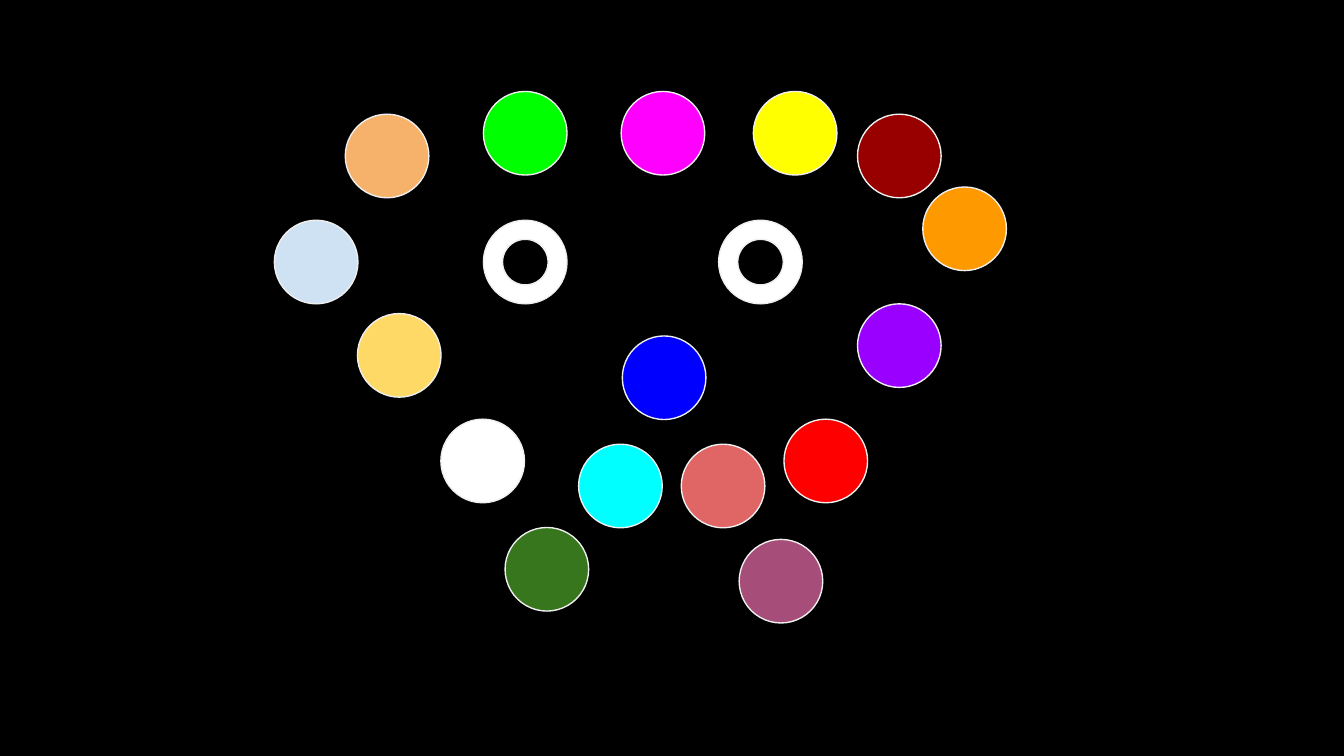
"""Build a black slide with a face made of coloured discs."""
from pptx import Presentation
from pptx.dml.color import RGBColor
from pptx.enum.shapes import MSO_SHAPE
from pptx.util import Pt

BLACK = RGBColor(0x00, 0x00, 0x00)
WHITE = RGBColor(0xFF, 0xFF, 0xFF)
OUTLINE = RGBColor(0xEF, 0xEF, 0xEF)
BLUE = RGBColor(0x00, 0x00, 0xFF)
RED = RGBColor(0xFF, 0x00, 0x00)
SAND = RGBColor(0xFF, 0xD9, 0x66)
PURPLE = RGBColor(0x99, 0x00, 0xFF)
FOREST = RGBColor(0x38, 0x76, 0x1D)
PLUM = RGBColor(0xA6, 0x4D, 0x79)
CYAN = RGBColor(0x00, 0xFF, 0xFF)
CORAL = RGBColor(0xE0, 0x66, 0x66)
PALE_BLUE = RGBColor(0xCF, 0xE2, 0xF3)
ORANGE = RGBColor(0xFF, 0x99, 0x00)
PEACH = RGBColor(0xF6, 0xB2, 0x6B)
GREEN = RGBColor(0x00, 0xFF, 0x00)
MAGENTA = RGBColor(0xFF, 0x00, 0xFF)
YELLOW = RGBColor(0xFF, 0xFF, 0x00)
MAROON = RGBColor(0x98, 0x00, 0x00)

DISC = 44.8
PUPIL = 24.4
HAIR_TOP, TEMPLE_TOP, EYE_TOP = 49, 61.2, 118
JAW_TOP, MOUTH_TOP = 224.6, 238
EYE_LEFTS = (259, 385)

presentation = Presentation()
presentation.slide_width = Pt(720)
presentation.slide_height = Pt(405)
slide = presentation.slides.add_slide(presentation.slide_layouts[6])
slide.background.fill.solid()
slide.background.fill.fore_color.rgb = BLACK


def add_disc(left, top, color, size=DISC):
    disc = slide.shapes.add_shape(
        MSO_SHAPE.OVAL, Pt(left), Pt(top), Pt(size), Pt(size)
    )
    disc.shadow.inherit = False
    disc.fill.solid()
    disc.fill.fore_color.rgb = color
    disc.line.color.rgb = OUTLINE
    disc.line.width = Pt(0.75)


face = [
    (333.4, 180, BLUE),
    (420, 224.6, RED),
    (236.2, JAW_TOP, WHITE),
    (191.5, 168, SAND),
    (459.4, 162.8, PURPLE),
    (270.6, 282.6, FOREST),
    (396, 289, PLUM),
    (310, MOUTH_TOP, CYAN),
    (365, MOUTH_TOP, CORAL),
    (147, EYE_TOP, PALE_BLUE),
    (494.4, 100.2, ORANGE),
    (185, TEMPLE_TOP, PEACH),
    (259, HAIR_TOP, GREEN),
    (332.8, HAIR_TOP, MAGENTA),
    (403.6, HAIR_TOP, YELLOW),
    (459.4, TEMPLE_TOP, MAROON),
]
for left, top, color in face:
    add_disc(left, top, color)

pupil_inset = (DISC - PUPIL) / 2
for eye_left in EYE_LEFTS:
    add_disc(eye_left, EYE_TOP, WHITE)
    add_disc(eye_left + pupil_inset, EYE_TOP + pupil_inset, BLACK, PUPIL)

presentation.save("out.pptx")
